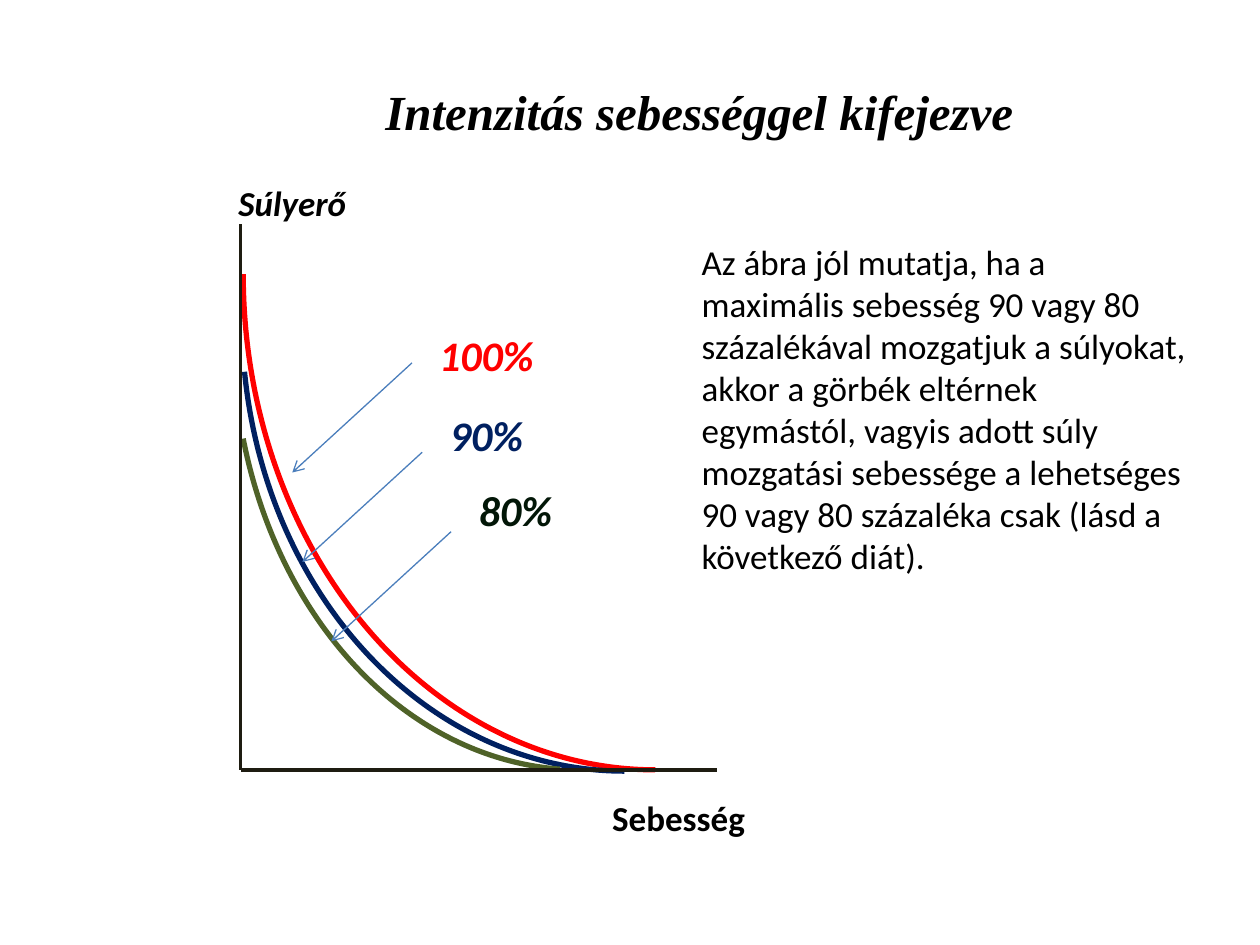
from dataclasses import dataclass
from lxml.etree import SubElement
from pptx import Presentation
from pptx.dml.color import RGBColor
from pptx.enum.shapes import MSO_CONNECTOR, MSO_SHAPE
from pptx.enum.text import MSO_AUTO_SIZE, PP_ALIGN
from pptx.oxml.ns import qn
from pptx.util import Inches, Pt


@dataclass(frozen=True)
class Theme:
    ink: str = "000000"
    axis: str = "1E1C11"
    arrow: str = "4B7EBC"
    red: str = "FF0000"
    navy: str = "002060"
    green: str = "4F6228"
    dark: str = "021607"
    sans: str = "Calibri"
    serif: str = "Times New Roman"
    title: int = 28
    label: int = 24
    body: int = 20


THEME = Theme()


def add_text(shapes, box, words, size=THEME.body, color=THEME.ink,
             face=THEME.sans, bold=True, slant=True, align=PP_ALIGN.CENTER):
    frame = shapes.add_textbox(*map(Inches, box)).text_frame
    frame.word_wrap = True
    frame.auto_size = MSO_AUTO_SIZE.SHAPE_TO_FIT_TEXT
    para = frame.paragraphs[0]
    para.alignment = align
    run = para.add_run()
    run.text = words
    font = run.font
    font.name, font.size = face, Pt(size)
    font.bold, font.italic = bold, slant
    font.color.rgb = RGBColor.from_string(color)


def add_line(shapes, start, end, color, width, arrow=False):
    line = shapes.add_connector(MSO_CONNECTOR.STRAIGHT, *map(Inches, (*start, *end)))
    line.line.color.rgb = RGBColor.from_string(color)
    line.line.width = Pt(width)
    if arrow:
        SubElement(line.line._get_or_add_ln(), qn("a:tailEnd"), type="arrow")
    SubElement(line._element.spPr, qn("a:effectLst"))


def add_curve(shapes, box, color, start, end):
    arc = shapes.add_shape(MSO_SHAPE.ARC, *map(Inches, box))
    arc.rotation = 180
    arc.adjustments[0], arc.adjustments[1] = start, end
    arc.shadow.inherit = False
    arc.fill.background()
    arc.line.color.rgb = RGBColor.from_string(color)
    arc.line.width = Pt(3)


def add_axes(shapes, box):
    left, top, width, height = box
    base = top + height
    group = shapes.add_group_shape().shapes
    for end in ((left, top), (left + width, base)):
        add_line(group, (left, base), end, THEME.axis, 2)


def add_label(shapes, box, words, color, tip):
    left, top, width, height = box
    group = shapes.add_group_shape().shapes
    x, y = left + tip[0], top + tip[1]
    add_line(group, (x, y), (x - 0.95, y + 0.87), THEME.arrow, 0.75, arrow=True)
    add_text(group, box, words, THEME.label, color)


def add_graph(shapes, box):
    left, top, width, height = box
    curves = (
        (0.02, -3.54, 6.54, 7.87, THEME.red, 162, 0),
        (0.01, -2.82, 6.07, 7.16, THEME.navy, 162, 211.35),
        (-0.06, -2.58, 5.51, 6.91, THEME.green, 163.6, 205.71),
    )
    for x, y, wide, high, *style in curves:
        add_curve(shapes, (left + x, top + y, wide, high), *style)
    add_axes(shapes, box)
    add_text(shapes, (left + 2.85, top + height + 0.16, 1.57, 0.44), "Sebesség",
             slant=False, align=PP_ALIGN.LEFT)
    labels = (
        (1.36, 0.79, "100%", THEME.red, (0, 0.31)),
        (1.36, 1.42, "90%", THEME.navy, (0.08, 0.39)),
        (1.59, 2.02, "80%", THEME.dark, (0.08, 0.42)),
    )
    for x, y, *rest in labels:
        add_label(shapes, (left + x, top + y, 1.18, 0.5), *rest)
    add_text(shapes, (left - 0.69, top - 0.39, 2.2, 0.44), "Súlyerő")


def add_title(shapes, box):
    add_text(shapes, box, "Intenzitás sebességgel kifejezve", THEME.title, face=THEME.serif)


def add_note(shapes, box):
    add_text(
        shapes, box,
        "Az ábra jól mutatja, ha a maximális sebesség 90 vagy 80 százalékával "
        "mozgatjuk a súlyokat, akkor a görbék eltérnek egymástól, vagyis adott súly "
        "mozgatási sebessége a lehetséges 90 vagy 80 százaléka csak (lásd a "
        "következő diát).",
        bold=False, slant=False, align=PP_ALIGN.LEFT)


def main():
    deck = Presentation()
    deck.slide_width, deck.slide_height = Inches(10), Inches(7.5)
    shapes = deck.slides.add_slide(deck.slide_layouts[6]).shapes
    add_graph(shapes, (1.91, 1.78, 3.78, 4.33))
    add_title(shapes, (2.32, 0.6, 6.46, 0.57))
    add_note(shapes, (5.47, 1.86, 4.09, 2.79))
    deck.save("out.pptx")


if __name__ == "__main__":
    main()
